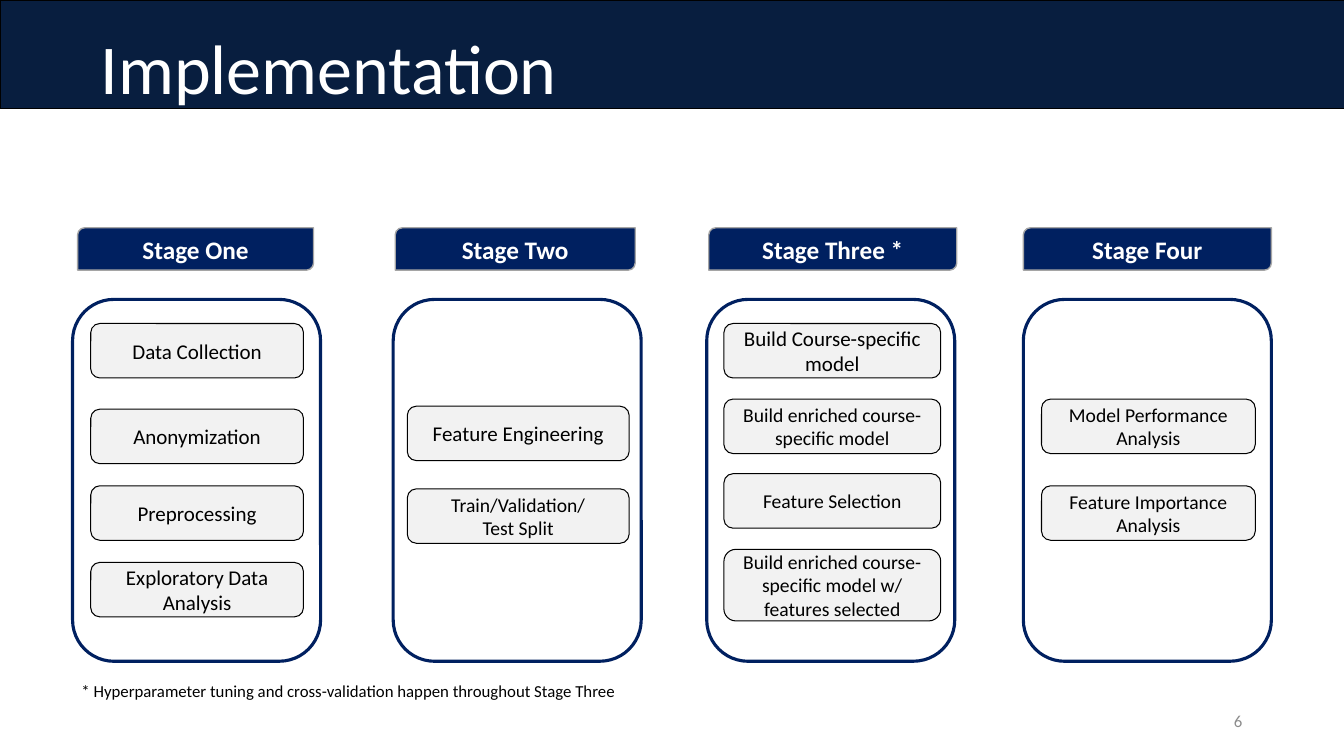
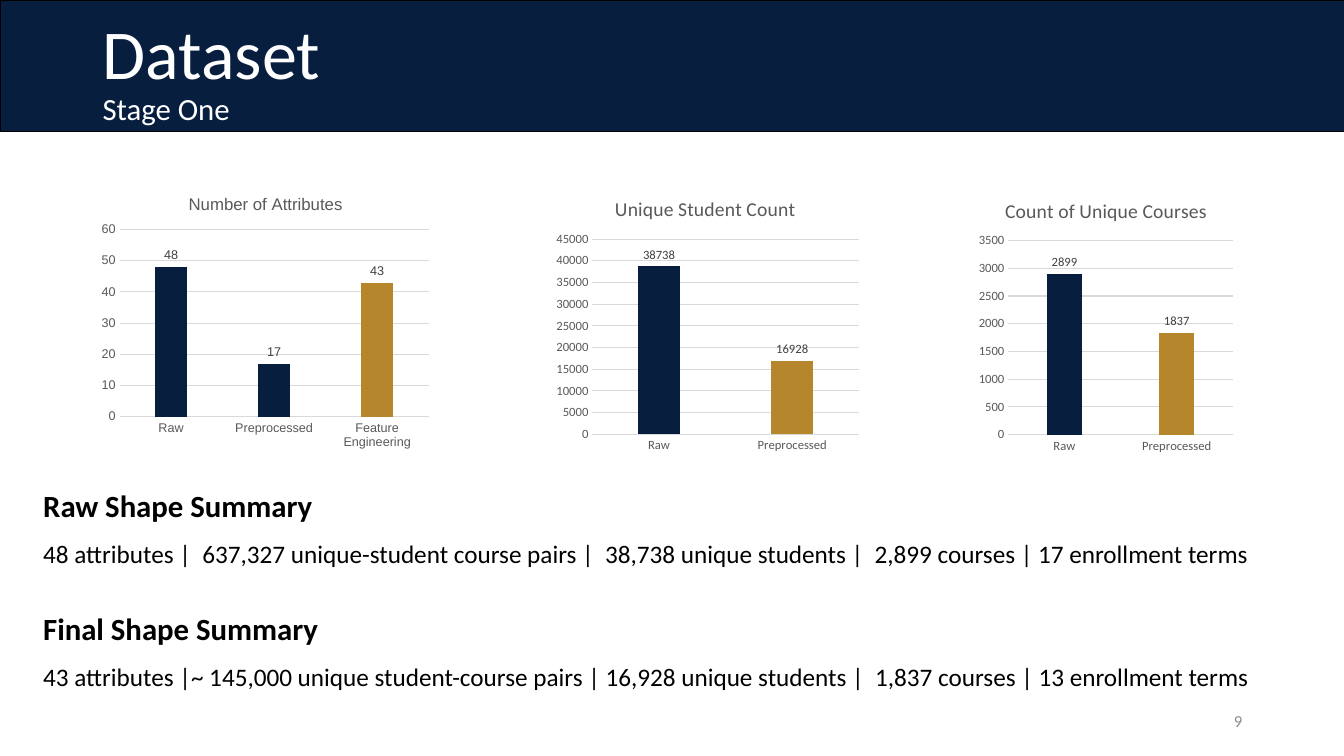
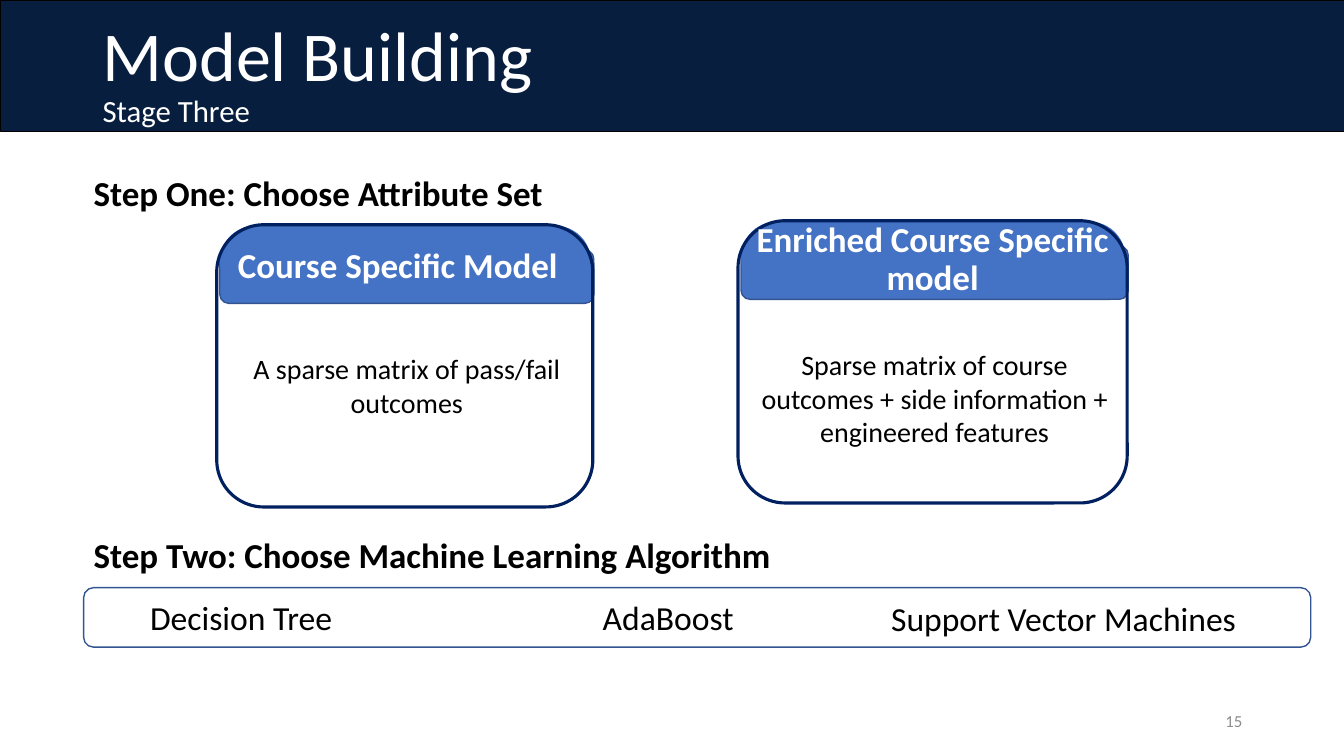
from dataclasses import dataclass
from typing import Optional

from lxml import etree
from pptx import Presentation
from pptx.chart.data import CategoryChartData
from pptx.dml.color import RGBColor
from pptx.enum.chart import XL_CHART_TYPE as ChartType
from pptx.enum.chart import XL_LABEL_POSITION as LabelPosition
from pptx.enum.chart import XL_TICK_MARK as TickMark
from pptx.enum.shapes import MSO_SHAPE as Preset
from pptx.enum.text import MSO_ANCHOR as Anchor
from pptx.enum.text import PP_ALIGN as Align
from pptx.oxml.ns import qn
from pptx.util import Inches, Pt

# Shared look
BAND_NAVY = RGBColor(0x08, 0x1E, 0x3F)
STAGE_NAVY = RGBColor(0x00, 0x20, 0x60)
BLUE = RGBColor(0x44, 0x72, 0xC4)
BLUE_EDGE = RGBColor(0x32, 0x54, 0x91)
GOLD = RGBColor(0xB6, 0x86, 0x2C)
BLACK = RGBColor(0, 0, 0)
WHITE = RGBColor(0xFF, 0xFF, 0xFF)
STEP_FILL = RGBColor(0xF2, 0xF2, 0xF2)
HEADER_EDGE = RGBColor(0xA5, 0xA5, 0xA5)
PAGE_GRAY = RGBColor(0x8C, 0x8C, 0x8C)
AXIS_TEXT = RGBColor(0x59, 0x59, 0x59)
LABEL_TEXT = RGBColor(0x40, 0x40, 0x40)
GRID_GRAY = RGBColor(0xD9, 0xD9, 0xD9)
FONT = "Calibri"
SLIDE_WIDTH, SLIDE_HEIGHT = 13.33, 7.5


@dataclass
class Box:
    left: float
    top: float
    width: float
    height: float

    def lengths(self) -> tuple:
        return tuple(Inches(n) for n in (self.left, self.top, self.width, self.height))


@dataclass
class TextStyle:
    size: float
    color: RGBColor = BLACK
    bold: bool = False
    align: Align = Align.LEFT
    anchor: Anchor = Anchor.TOP
    spacing: float = 1.0


@dataclass
class Step:
    text: str
    top: float
    size: float = 14
    height: float = 0.54


@dataclass
class Stage:
    name: str
    left: float
    header_left: float
    header_width: float
    step_left: float
    step_width: float
    steps: list[Step]


@dataclass
class BarChart:
    title: str
    box: Box
    plot: tuple[float, float, float, float]  # shares of the chart: x, y, w, h
    categories: list[str]
    values: list[int]
    maximum: int
    interval: int
    title_size: float = 14
    font: str = FONT


@dataclass
class ModelCard:
    heading: str
    body: str
    panel: Box
    heading_shift: tuple[float, float]


STAGE_HEADER = TextStyle(18, WHITE, True, Align.CENTER, Anchor.MIDDLE)
CARD_HEADING = TextStyle(25, WHITE, True, Align.CENTER, Anchor.MIDDLE, 0.9)
CARD_BODY = TextStyle(20, align=Align.CENTER)
PAGE_NUMBER = TextStyle(12, PAGE_GRAY, align=Align.RIGHT, anchor=Anchor.MIDDLE)
SUMMARY_HEADING = TextStyle(22, bold=True)
STEP_HEADING = TextStyle(25, bold=True)

STAGES = [
    Stage("Stage One", 0.72, 0.77, 2.34, 0.9, 2.11, [
        Step("Data Collection", 3.21, 15),
        Step("Anonymization", 4.06, 15),
        Step("Preprocessing", 4.82, 15),
        Step("Exploratory Data Analysis", 5.58, 15)]),
    Stage("Stage Two", 3.9, 3.92, 2.38, 4.04, 2.2, [
        Step("Feature Engineering", 4.03, 15),
        Step("Train/Validation/\nTest Split", 4.85)]),
    Stage("Stage Three *", 7.01, 7.03, 2.46, 7.18, 2.15, [
        Step("Build Course-specific model", 3.21, 15),
        Step("Build enriched course-specific model", 3.96),
        Step("Feature Selection", 4.7),
        Step("Build enriched course-specific model w/ features selected",
             5.45, height=0.71)]),
    Stage("Stage Four", 10.15, 10.15, 2.46, 10.33, 2.12, [
        Step("Model Performance Analysis", 3.96),
        Step("Feature Importance Analysis", 4.82)]),
]

CHARTS = [
    BarChart("Number of Attributes", Box(0.95, 1.78, 3.37, 2.77),
             (0.07, 0.18, 0.91, 0.67), ["Raw", "Preprocessed", "Feature Engineering"],
             [48, 17, 43], 60, 10, 12, "Arial"),
    BarChart("Unique Student Count", Box(5.44, 1.79, 3.11, 2.77),
             (0.14, 0.21, 0.85, 0.7), ["Raw", "Preprocessed"],
             [38738, 16928], 45000, 5000),
    BarChart("Count of Unique Courses", Box(9.66, 1.81, 2.62, 2.75),
             (0.13, 0.21, 0.85, 0.7), ["Raw", "Preprocessed"],
             [2899, 1837], 3500, 500),
]

SUMMARIES = [
    (4.78, "Raw Shape Summary",
     "48 attributes |  637,327 unique-student course pairs |  38,738 unique students"
     " |  2,899 courses | 17 enrollment terms"),
    (6.0, "Final Shape Summary",
     "43 attributes |~ 145,000 unique student-course pairs | 16,928 unique students"
     " |  1,837 courses | 13 enrollment terms"),
]

CARDS = [
    ModelCard("Course Specific Model", "A sparse matrix of pass/fail outcomes",
              Box(2.15, 2.23, 3.73, 2.8), (-0.07, 0.07)),
    ModelCard("Enriched Course Specific model",
              "Sparse matrix of course outcomes + side information + engineered features",
              Box(7.32, 2.19, 3.86, 2.8), (0, 0.04)),
]

ALGORITHMS = [
    ("Decision Tree", Box(1.39, 5.87, 2.53, 0.5)),
    ("AdaBoost", Box(5.88, 5.87, 1.6, 0.5)),
    ("Support Vector Machines", Box(8.74, 5.88, 3.8, 0.5)),
]


# Drawing functions
def set_font(font, size: float, color: RGBColor, bold: bool = False,
             name: str = FONT) -> None:
    font.name, font.size, font.bold = name, Pt(size), bold
    font.color.rgb = color


def write(frame, text: str, style: TextStyle) -> None:
    frame.word_wrap = True
    frame.vertical_anchor = style.anchor
    frame.text = text
    for para in frame.paragraphs:
        para.alignment, para.line_spacing = style.align, style.spacing
        set_font(para.font, style.size, style.color, style.bold)


def add_text(page, box: Box, text: str, style: TextStyle) -> None:
    write(page.shapes.add_textbox(*box.lengths()).text_frame, text, style)


def add_preset(page, preset: Preset, box: Box, fill: Optional[RGBColor] = None,
               edge: Optional[RGBColor] = None, weight: float = 1):
    shape = page.shapes.add_shape(preset, *box.lengths())
    shape.shadow.inherit = False
    if fill is None:
        shape.fill.background()
    else:
        shape.fill.solid()
        shape.fill.fore_color.rgb = fill
    if edge is None:
        shape.line.fill.background()
    else:
        shape.line.color.rgb = edge
        shape.line.width = Pt(weight)
    return shape


def add_page(deck, number: int, title: str, title_box: Box, band_height: float,
             subtitle: str = ""):
    page = deck.slides.add_slide(deck.slide_layouts[6])
    add_preset(page, Preset.RECTANGLE, Box(0, 0, SLIDE_WIDTH, band_height),
               BAND_NAVY, BLACK, 0.5)
    frame = page.shapes.add_textbox(*title_box.lengths()).text_frame
    frame.word_wrap = True
    frame.vertical_anchor = Anchor.MIDDLE
    para = frame.paragraphs[0]
    para.line_spacing = 0.9
    set_font(para.font, 50, WHITE)
    para.add_run().text = title
    if subtitle:
        para.add_line_break()
        span = para.add_run()
        span.text = subtitle
        span.font.size = Pt(22)
    add_text(page, Box(9.42, 6.95, 3, 0.4), str(number), PAGE_NUMBER)
    return page


def add_stage(page, stage: Stage) -> None:
    add_preset(page, Preset.ROUNDED_RECTANGLE, Box(stage.left, 2.97, 2.46, 3.59),
               edge=STAGE_NAVY, weight=2.25)
    header = add_preset(page, Preset.ROUND_2_DIAG_RECTANGLE,
                        Box(stage.header_left, 2.26, stage.header_width, 0.42),
                        STAGE_NAVY, HEADER_EDGE)
    write(header.text_frame, stage.name, STAGE_HEADER)
    for step in stage.steps:
        shape = add_preset(page, Preset.ROUNDED_RECTANGLE,
                           Box(stage.step_left, step.top, stage.step_width, step.height),
                           STEP_FILL, BLACK, 0.75)
        write(shape.text_frame, step.text,
              TextStyle(step.size, align=Align.CENTER, anchor=Anchor.MIDDLE))


def place_plot(chart, shares: tuple[float, float, float, float]) -> None:
    area = chart._chartSpace.find(".//" + qn("c:plotArea"))
    for old in area.findall(qn("c:layout")):
        area.remove(old)
    layout = etree.Element(qn("c:layout"))
    manual = etree.SubElement(layout, qn("c:manualLayout"))
    settings = [("layoutTarget", "inner"), ("xMode", "edge"), ("yMode", "edge")]
    settings += zip("xywh", map(str, shares))
    for tag, value in settings:
        etree.SubElement(manual, qn("c:" + tag)).set("val", value)
    area.insert(0, layout)


def add_bar_chart(page, bars: BarChart) -> None:
    data = CategoryChartData()
    data.categories = bars.categories
    data.add_series("Series 1", bars.values)
    chart = page.shapes.add_chart(ChartType.COLUMN_CLUSTERED, *bars.box.lengths(),
                                  data).chart
    set_font(chart.font, 10, BLACK, name=bars.font)
    chart.has_legend = False
    title = chart.chart_title
    title.include_in_layout = False
    title.text_frame.text = bars.title
    set_font(title.text_frame.paragraphs[0].font, bars.title_size, AXIS_TEXT,
             name=bars.font)
    place_plot(chart, bars.plot)

    # Axes
    for axis in (chart.category_axis, chart.value_axis):
        axis.major_tick_mark = axis.minor_tick_mark = TickMark.NONE
        set_font(axis.tick_labels.font, 9, AXIS_TEXT, name=bars.font)
    value_axis = chart.value_axis
    value_axis.minimum_scale, value_axis.maximum_scale = 0, bars.maximum
    value_axis.major_unit = bars.interval
    value_axis.format.line.fill.background()
    for line in (chart.category_axis.format.line, value_axis.major_gridlines.format.line):
        line.color.rgb = GRID_GRAY
        line.width = Pt(0.75)

    # Bars: the last one stands out in gold
    plot = chart.plots[0]
    plot.vary_by_categories = False
    plot.gap_width, plot.overlap = 219, -27
    series = plot.series[0]
    series.format.fill.solid()
    series.format.fill.fore_color.rgb = BAND_NAVY
    last_fill = series.points[len(bars.values) - 1].format.fill
    last_fill.solid()
    last_fill.fore_color.rgb = GOLD
    labels = series.data_labels
    labels.show_value = True
    labels.position = LabelPosition.OUTSIDE_END
    set_font(labels.font, 9, LABEL_TEXT, name=bars.font)


def add_card(page, card: ModelCard) -> None:
    left, top, width = card.panel.left, card.panel.top, card.panel.width
    rounded = Preset.ROUNDED_RECTANGLE
    add_preset(page, rounded, Box(left + 0.03, top + 0.25, width - 0.02, 0.53),
               BLUE, BLUE_EDGE)
    cap = add_preset(page, rounded, Box(left + 0.03, top + 0.01, width - 0.05, 0.7), BLUE)
    cap.adjustments[0] = 0.5
    add_preset(page, rounded, card.panel, edge=STAGE_NAVY, weight=2.25)
    shift_x, shift_y = card.heading_shift
    add_text(page, Box(left + shift_x, top + shift_y, width, 0.7), card.heading,
             CARD_HEADING)
    add_text(page, Box(left + 0.03, top + 1.21, width - 0.02, 1.11), card.body, CARD_BODY)


# Slides
def build_implementation(deck) -> None:
    page = add_page(deck, 6, "Implementation", Box(0.9, -0.01, 11.5, 1.45), 1.08)
    for stage in STAGES:
        add_stage(page, stage)
    add_text(page, Box(0.71, 6.7, 11.9, 0.3),
             "* Hyperparameter tuning and cross-validation happen throughout Stage Three",
             TextStyle(12))


def build_dataset(deck) -> None:
    page = add_page(deck, 9, "Dataset", Box(0.92, 0, 11.5, 1.45), 1.3, "Stage One")
    for bars in CHARTS:
        add_bar_chart(page, bars)
    for top, heading, facts in SUMMARIES:
        add_text(page, Box(0.33, top, 7.59, 0.47), heading, SUMMARY_HEADING)
        add_text(page, Box(0.33, top + 0.51, 12.48, 0.4), facts, TextStyle(18))


def build_model_building(deck) -> None:
    page = add_page(deck, 15, "Model Building", Box(0.92, 0.02, 11.5, 1.45), 1.3,
                    "Stage Three")
    for top, heading in ((1.65, "Step One: Choose Attribute Set"),
                         (5.24, "Step Two: Choose Machine Learning Algorithm")):
        add_text(page, Box(0.83, top, 12.01, 0.52), heading, STEP_HEADING)
    for card in CARDS:
        add_card(page, card)
    add_preset(page, Preset.ROUNDED_RECTANGLE, Box(0.83, 5.83, 12.17, 0.59),
               edge=BLUE_EDGE)
    for name, box in ALGORITHMS:
        add_text(page, box, name, TextStyle(24))


def main() -> None:
    deck = Presentation()
    deck.slide_width, deck.slide_height = Inches(SLIDE_WIDTH), Inches(SLIDE_HEIGHT)
    build_implementation(deck)
    build_dataset(deck)
    build_model_building(deck)
    deck.save("out.pptx")


if __name__ == "__main__":
    main()
